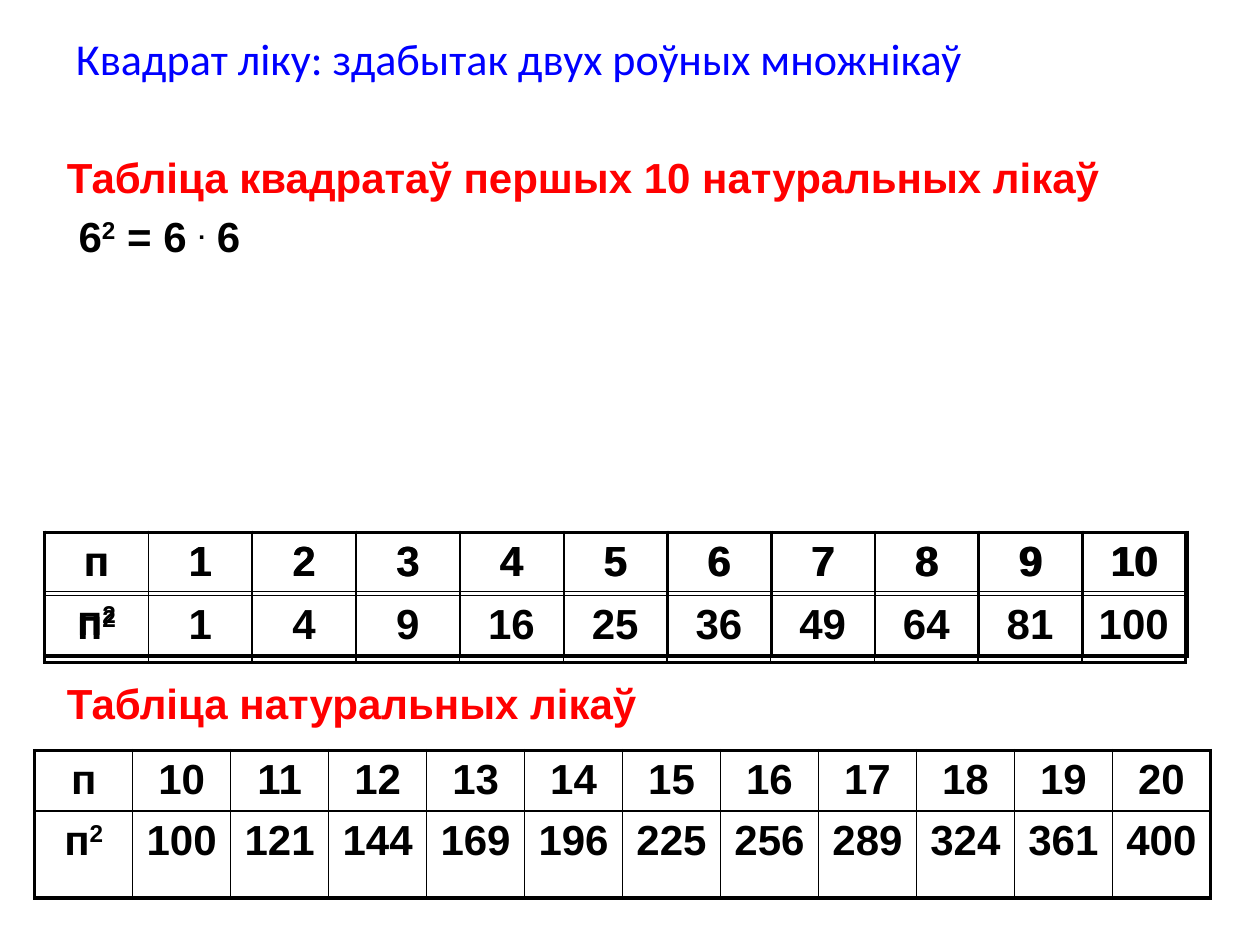
from dataclasses import dataclass

from lxml import etree
from pptx import Presentation
from pptx.dml.color import RGBColor
from pptx.enum.text import MSO_ANCHOR, PP_ALIGN
from pptx.oxml.ns import qn
from pptx.util import Cm, Pt

MID = MSO_ANCHOR.MIDDLE
TOP = MSO_ANCHOR.TOP
CENTER = PP_ALIGN.CENTER


@dataclass(frozen=True)
class Theme:
    blue: str = "0000FF"
    red: str = "FF0000"
    black: str = "000000"
    head: str = "Calibri"
    body: str = "Arial"
    head_size: float = 25.2
    size: float = 24
    thin: float = 1
    thick: float = 2.25


@dataclass(frozen=True)
class Box:
    left: float
    top: float
    width: float
    height: float

    def spot(self) -> tuple:
        return Cm(self.left), Cm(self.top), Cm(self.width), Cm(self.height)


@dataclass(frozen=True)
class Line:
    text: str  # parts between ^ signs are raised
    color: str
    font: str
    size: float
    bold: bool = True
    gap: bool = False  # space before, 20 %
    hang: float = 0


@dataclass(frozen=True)
class Grid:
    box: Box
    rows: tuple
    nums: range
    full: bool = True  # squares are filled in
    foot: float = 0.05  # bottom margin of cells


THEME = Theme()


def write(par, line: Line) -> None:
    font = par.font
    font.name, font.size, font.bold = line.font, Pt(line.size), line.bold
    font.color.rgb = RGBColor.from_string(line.color)
    props = par._p.get_or_add_pPr()
    if line.gap:
        space = etree.Element(qn("a:spcBef"))
        etree.SubElement(space, qn("a:spcPct"), val="20000")
        props.insert(0, space)
    if line.hang:
        props.set("marL", str(Cm(line.hang)))
        props.set("indent", str(-Cm(line.hang)))
    for i, part in enumerate(line.text.split("^")):
        run = par.add_run()
        run.text = part
        if i % 2:
            run.font._element.set("baseline", "30000")


def add_text(slide, box: Box, lines: list[Line], anchor=TOP):
    frame = slide.shapes.add_textbox(*box.spot()).text_frame
    frame.word_wrap = True
    frame.vertical_anchor = anchor
    for i, line in enumerate(lines):
        write(frame.add_paragraph() if i else frame.paragraphs[0], line)
    return frame


def edge(cell, side: str, width: float) -> None:
    props = cell._tc.get_or_add_tcPr()
    line = etree.SubElement(props, qn(f"a:ln{side}"), w=str(Pt(width)))
    fill = etree.SubElement(line, qn("a:solidFill"))
    etree.SubElement(fill, qn("a:srgbClr"), val=THEME.black)


def add_grid(slide, grid: Grid) -> None:
    squares = [str(n * n) if grid.full else "" for n in grid.nums]
    data = [["п", *map(str, grid.nums)], ["п^2", *squares]]
    count = len(data[0])
    frame = slide.shapes.add_table(len(data), count, *grid.box.spot())
    table = frame.table
    table.first_row = table.horz_banding = False
    for col in table.columns:
        col.width = Cm(grid.box.width / count)
    for r, row in enumerate(data):
        table.rows[r].height = Cm(grid.rows[r])
        for c, text in enumerate(row):
            cell = table.cell(r, c)
            cell.margin_bottom = Cm(grid.foot)
            # Thick lines on the outside only
            outer = {"L": c == 0, "R": c == count - 1,
                     "T": r == 0, "B": r == len(data) - 1}
            for side, rim in outer.items():
                edge(cell, side, THEME.thick if rim else THEME.thin)
            cell.fill.background()
            if text:
                par = cell.text_frame.paragraphs[0]
                par.alignment = CENTER
                write(par, Line(text, THEME.black, THEME.body, THEME.size, gap=True))
    frame.height = Cm(grid.box.height)


def main() -> None:
    deck = Presentation()
    deck.slide_width, deck.slide_height = Cm(25.4), Cm(19.05)
    slide = deck.slides.add_slide(deck.slide_layouts[6])

    # Title
    title = Line("Квадрат ліку: здабытак двух роўных множнікаў",
                 THEME.blue, THEME.head, THEME.head_size, bold=False)
    frame = add_text(slide, Box(1.28, 0.76, 22.86, 0.97), [title], MID)
    frame.paragraphs[0].line_spacing = 0.9

    # Tables: empty squares, then the second ten
    ten = range(1, 11)
    add_grid(slide, Grid(Box(0.9, 10.73, 23.04, 2.54), (1.19, 1.3), ten, False))
    add_grid(slide, Grid(Box(0.7, 15.13, 23.7, 3.02), (1.22, 1.75), range(10, 21)))

    # Headings and example
    add_text(slide, Box(1.1, 2.93, 22.86, 2.39), [
        Line("Табліца квадратаў першых 10 натуральных лікаў",
             THEME.red, THEME.body, THEME.size, gap=True, hang=0.95),
        Line(" 6^2^ = 6 ^.^ 6",
             THEME.black, THEME.body, THEME.size, gap=True, hang=0.95),
    ])
    add_text(slide, Box(1.1, 13.53, 22.66, 2.31), [
        Line("Табліца натуральных лікаў", THEME.red, THEME.body, THEME.size),
    ])

    # Filled table over the empty one
    add_grid(slide, Grid(Box(0.9, 10.73, 23.01, 2.62), (1.27, 1.35), ten, foot=0.13))

    deck.save("out.pptx")


if __name__ == "__main__":
    main()
